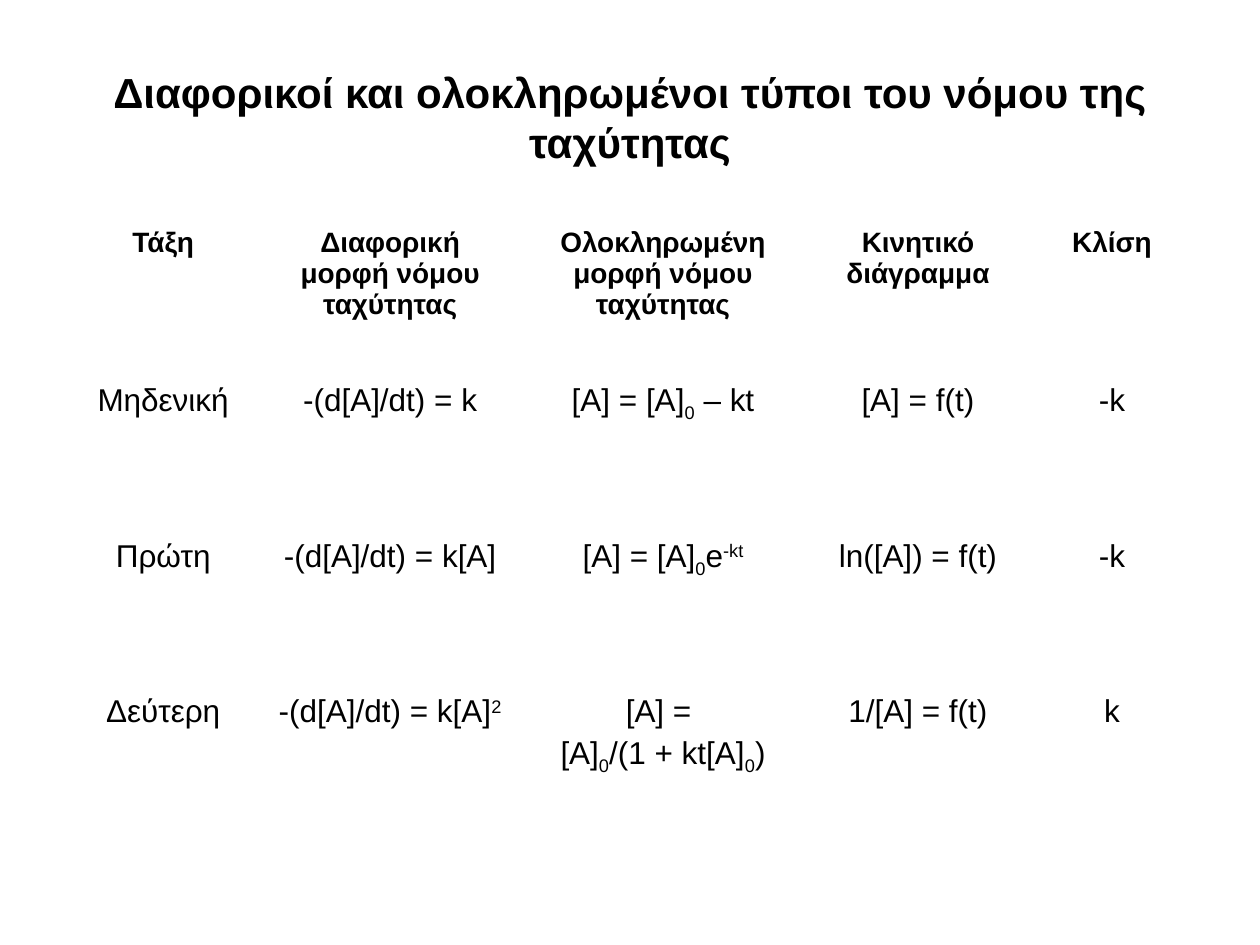
from pptx import Presentation
from pptx.dml.color import RGBColor
from pptx.enum.text import MSO_ANCHOR, PP_ALIGN
from pptx.util import Cm, Pt

BLACK = RGBColor(0, 0, 0)
BASE = {"name": "Arial", "bold": False}
TITLE = {**BASE, "size": Pt(24), "bold": True}
HEAD = {**BASE, "size": Pt(16), "bold": True}
BODY = {**BASE, "size": Pt(18)}

LEFT, WIDTH = Cm(1.27), Cm(22.86)
COLS = [4.04, 5.11, 5.89, 4.39, 3.43]
HIGH = Cm(3.14)
SUB = ("0", -25000)

ROWS = [
    ["Τάξη", "Διαφορική μορφή νόμου ταχύτητας",
     "Ολοκληρωμένη μορφή νόμου ταχύτητας", "Κινητικό διάγραμμα", "Κλίση"],
    ["Μηδενική", "-(d[A]/dt) = k", [["[A] = [A]", SUB, " – kt"]],
     "[A] = f(t)", "-k"],
    ["Πρώτη", "-(d[A]/dt) = k[A]",
     [["[A] = [A]", SUB, "e", ("-kt", 30000)]], "ln([A]) = f(t)", "-k"],
    ["Δεύτερη", [["-(d[A]/dt) = k[A]", ("2", 30000)]],
     [["[A] = "], ["[A]", SUB, "/(1 + kt[A]", SUB, ")"]],
     "1/[A] = f(t)", "k"],
]


def style(font, form):
    for key, value in form.items():
        setattr(font, key, value)
    font.color.rgb = BLACK


def add_run(para, part, form):
    text, shift = (part, 0) if isinstance(part, str) else part
    run = para.add_run()
    run.text = text
    style(run.font, form)
    if shift:
        run._r.get_or_add_rPr().set("baseline", str(shift))


def fill_text(frame, lines, form):
    if isinstance(lines, str):
        lines = [[lines]]
    for i, parts in enumerate(lines):
        para = frame.add_paragraph() if i else frame.paragraphs[0]
        para.alignment = PP_ALIGN.CENTER
        if i:
            para.space_before = Pt(3.6)
        for part in parts:
            add_run(para, part, form)


def add_title(slide, text):
    title = slide.shapes.title
    place = {"left": LEFT, "top": Cm(0.76), "width": WIDTH, "height": Cm(3.18)}
    for key, value in place.items():
        setattr(title, key, value)
    frame = title.text_frame
    frame.word_wrap = True
    frame.vertical_anchor = MSO_ANCHOR.MIDDLE
    fill_text(frame, text, TITLE)


def add_grid(slide):
    table = slide.shapes.add_table(len(ROWS), len(COLS), LEFT, Cm(4.45),
                                   WIDTH, HIGH * len(ROWS)).table
    table.first_row = table.horz_banding = False
    for col, width in zip(table.columns, COLS):
        col.width = Cm(width)
    for i, (row, items) in enumerate(zip(table.rows, ROWS)):
        row.height = HIGH
        for cell, item in zip(row.cells, items):
            cell.fill.background()
            fill_text(cell.text_frame, item, BODY if i else HEAD)


def main():
    deck = Presentation()
    deck.slide_width, deck.slide_height = Cm(25.4), Cm(19.05)
    slide = deck.slides.add_slide(deck.slide_layouts[5])
    add_title(slide, "Διαφορικοί και ολοκληρωμένοι τύποι του νόμου της ταχύτητας")
    add_grid(slide)
    deck.save("out.pptx")


if __name__ == "__main__":
    main()
